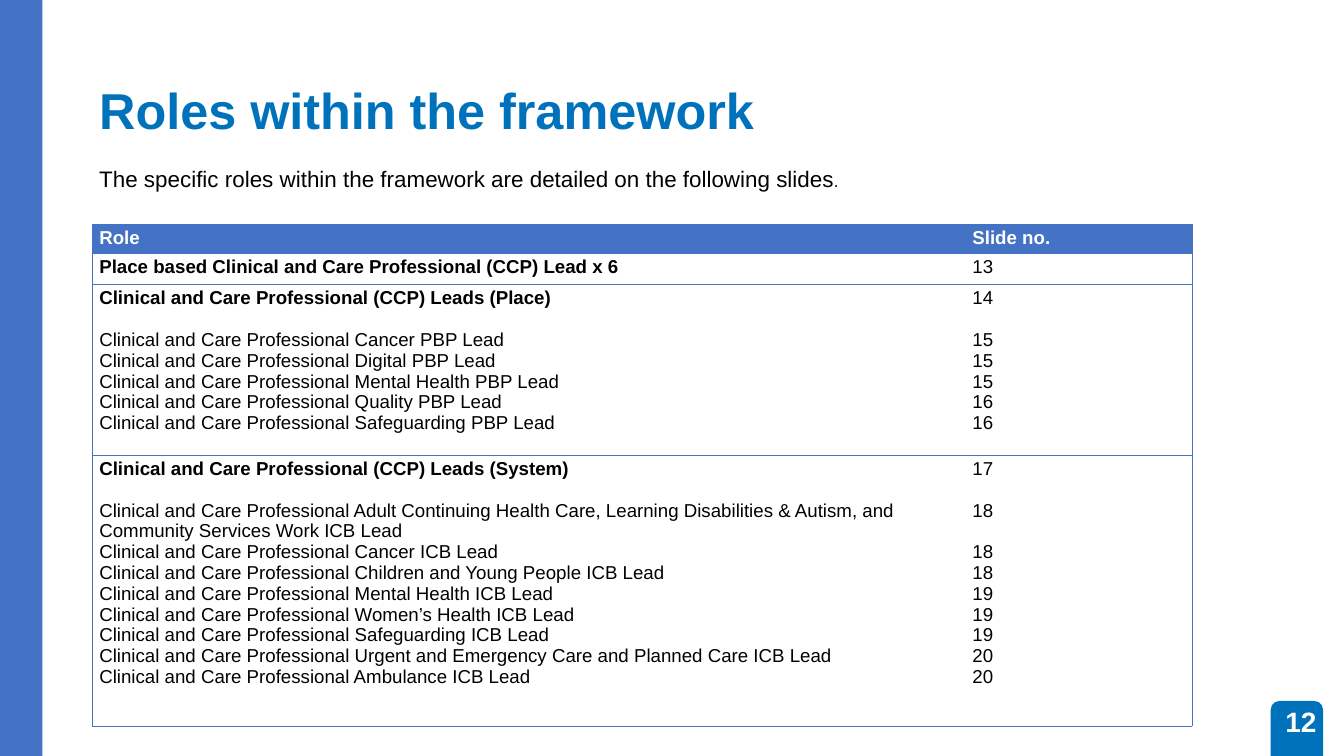
from dataclasses import dataclass

import pptx
import pptx.dml.color
import pptx.enum.shapes
import pptx.enum.text
import pptx.oxml
import pptx.oxml.ns
import pptx.util
from pptx.util import Cm, Pt

BLUE, ACCENT, BLACK, WHITE = "4472C4", "0072BC", "000000", "FFFFFF"
LINE_GAP = 22.4
SHAPES = pptx.enum.shapes.MSO_SHAPE
ANCHOR = pptx.enum.text.MSO_ANCHOR
ALIGN = pptx.enum.text.PP_ALIGN


@dataclass
class Entry:
    role: str
    number: str
    bold: bool = False
    gap: bool = False
    wrapped: bool = False


@dataclass
class Group:
    height: float
    entries: list[Entry]
    color: str = BLACK
    fill: str = WHITE


def care(lead: str, number: int, wrapped: bool = False) -> Entry:
    return Entry(f"Clinical and Care Professional {lead} Lead", str(number), wrapped=wrapped)


GROUPS = [
    Group(1.04, [Entry("Role", "Slide no.", bold=True)], WHITE, BLUE),
    Group(1.17, [Entry("Place based Clinical and Care Professional (CCP) Lead x 6", "13", bold=True)]),
    Group(6.45, [
        Entry("Clinical and Care Professional (CCP) Leads (Place)", "14", bold=True, gap=True),
        care("Cancer PBP", 15),
        care("Digital PBP", 15),
        care("Mental Health PBP", 15),
        care("Quality PBP", 16),
        care("Safeguarding PBP", 16),
    ]),
    Group(10.24, [
        Entry("Clinical and Care Professional (CCP) Leads (System)", "17", bold=True, gap=True),
        care("Adult Continuing Health Care, Learning Disabilities & Autism, "
             "and Community Services Work ICB", 18, wrapped=True),
        care("Cancer ICB", 18),
        care("Children and Young People ICB", 18),
        care("Mental Health ICB", 19),
        care("Women’s Health ICB", 19),
        care("Safeguarding ICB", 19),
        care("Urgent and Emergency Care and Planned Care ICB", 20),
        care("Ambulance ICB", 20),
    ]),
]


def rgb(color: str) -> pptx.dml.color.RGBColor:
    return pptx.dml.color.RGBColor.from_string(color)


def set_font(font, size: float, color: str, bold: bool = False) -> None:
    font.name, font.size, font.bold = "Arial", Pt(size), bold
    font.color.rgb = rgb(color)


def add_block(s, kind, box: tuple, color: str):
    sp = s.shapes.add_shape(kind, *map(Cm, box))
    sp.shadow.inherit = False
    sp.fill.solid()
    sp.fill.fore_color.rgb = rgb(color)
    sp.line.fill.background()
    return sp


def add_text(s, box: tuple, text: str, size: float, color: str, bold: bool = False,
             anchor=ANCHOR.TOP, align=ALIGN.LEFT):
    tf = s.shapes.add_textbox(*map(Cm, box)).text_frame
    tf.word_wrap = True
    tf.vertical_anchor = anchor
    p = tf.paragraphs[0]
    p.alignment = align
    p.add_run().text = text
    set_font(p.font, size, color, bold)
    return p


def set_borders(cell, visible: str) -> None:
    """Draw the sides named in visible (L, R, T, B) and hide the others."""
    ns = pptx.oxml.ns.nsdecls("a")
    solid = f'<a:solidFill><a:srgbClr val="{BLUE}"/></a:solidFill>'
    props = cell._tc.get_or_add_tcPr()
    for i, side in enumerate("LRTB"):
        paint = solid if side in visible else "<a:noFill/>"
        props.insert(i, pptx.oxml.parse_xml(f'<a:ln{side} {ns} w="{Pt(0.5)}">{paint}</a:ln{side}>'))


def fill_cell(cell, group: Group, column: int) -> None:
    cell.fill.solid()
    cell.fill.fore_color.rgb = rgb(group.fill)
    set_borders(cell, "LTB" if column == 0 else "RTB")
    tf = cell.text_frame
    for i, entry in enumerate(group.entries):
        p = tf.paragraphs[0] if i == 0 else tf.add_paragraph()
        p.add_run().text = entry.number if column else entry.role
        header = group.fill == BLUE
        set_font(p.font, 20, group.color, entry.bold and (column == 0 or header))
        if entry.gap or (column and entry.wrapped):
            p.space_after = Pt(LINE_GAP)


def add_roles_table(s) -> None:
    widths = (33, 8.55)
    height = sum(g.height for g in GROUPS)
    frame = s.shapes.add_table(len(GROUPS), 2, Cm(3.5), Cm(8.48), Cm(sum(widths)), Cm(height))
    table = frame.table
    table.first_row = table.horz_banding = False
    for column, width in zip(table.columns, widths):
        column.width = Cm(width)
    for row, group in zip(table.rows, GROUPS):
        row.height = Cm(group.height)
        for column, cell in enumerate(row.cells):
            fill_cell(cell, group, column)


def main() -> None:
    prs = pptx.Presentation()
    prs.slide_width, prs.slide_height = Cm(50.8), Cm(28.58)
    s = prs.slides.add_slide(prs.slide_layouts[6])
    add_block(s, SHAPES.ROUNDED_RECTANGLE, (48.03, 26.5, 1.98, 2.84), ACCENT)
    add_block(s, SHAPES.RECTANGLE, (-0.25, -0.3, 1.85, 29.87), BLUE)
    p = add_text(s, (3.5, 1.52, 39, 5.5), "Roles within the framework", 54, ACCENT, True, ANCHOR.MIDDLE)
    p.line_spacing = 0.9
    add_text(s, (38.58, 26.5, 11.43, 1.52), "12", 30, WHITE, True, ANCHOR.MIDDLE, ALIGN.RIGHT)
    add_roles_table(s)
    p = add_text(s, (3.5, 6.1, 35.76, 1.27),
                 "The specific roles within the framework are detailed on the following slides", 24, BLACK)
    r = p.add_run()
    r.text = "."
    r.font.size = Pt(18)
    prs.save("out.pptx")


if __name__ == "__main__":
    main()
